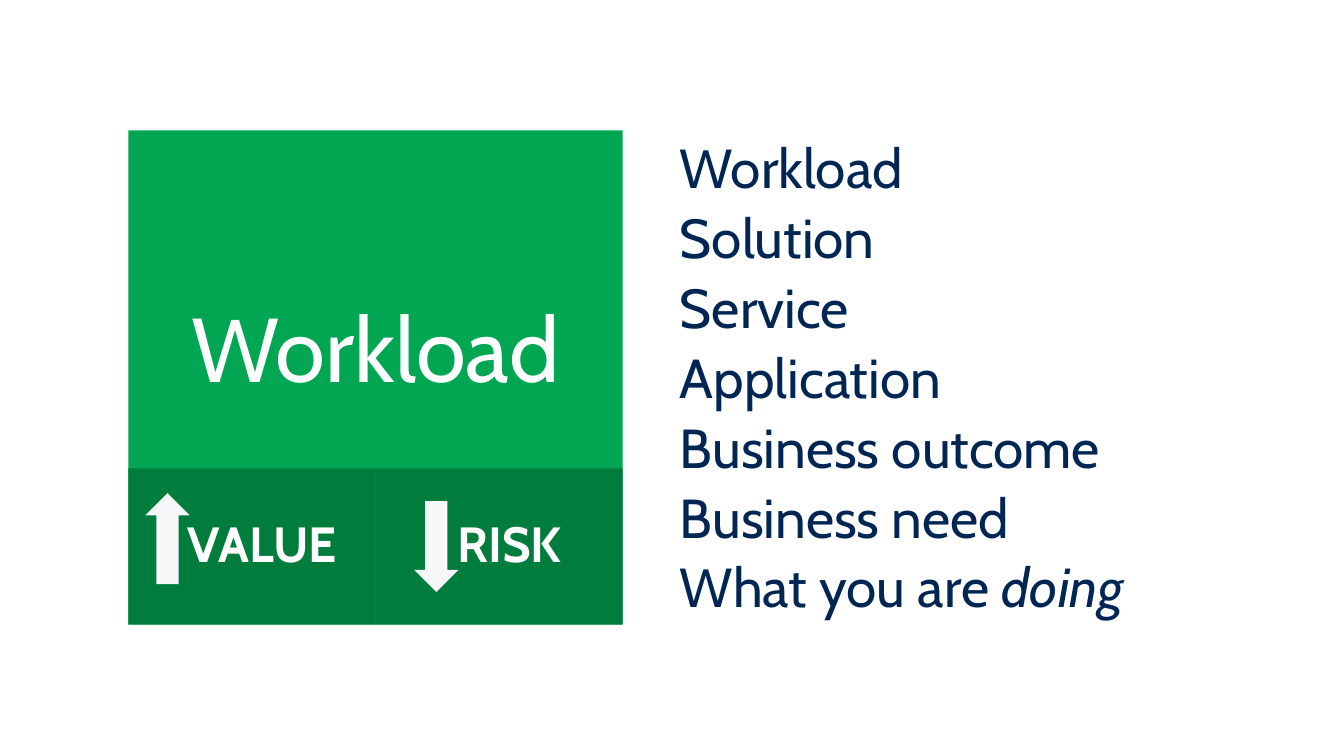
from pptx import Presentation
from pptx.dml.color import RGBColor
from pptx.enum.shapes import MSO_SHAPE
from pptx.enum.text import MSO_ANCHOR, PP_ALIGN
from pptx.util import Inches, Pt

GREEN = RGBColor(0x00, 0xA6, 0x51)
DARK_GREEN = RGBColor(0x00, 0x7D, 0x3D)
WHITE = RGBColor(0xFF, 0xFF, 0xFF)
PALE = RGBColor(0xF7, 0xF7, 0xF9)
NAVY = RGBColor(0x01, 0x26, 0x54)
FONT = "Cabin"
SLIDE_WIDTH, SLIDE_HEIGHT = 13.6, 7.65

TILE_BOX = (1.3, 1.32, 5, 5)
LIST_BOX = (6.72, 1.33, 6.58, 5.25)
BAND_HEIGHT = 1.58
ARROW_SIZE = (0.45, 0.92)
MEASURES = [
    ("VALUE", 0.17, 0.25, 0),
    ("RISK", 0.39, 0.33, 180),
]
TERMS = [
    [("Workload", False)],
    [("Solution", False)],
    [("Service", False)],
    [("Application", False)],
    [("Business outcome", False)],
    [("Business need", False)],
    [("What you are ", False), ("doing", True)],
]


def add_filled_shape(shapes, kind, box, color):
    shape = shapes.add_shape(kind, *map(Inches, box))
    shape.shadow.inherit = False
    shape.fill.solid()
    shape.fill.fore_color.rgb = color
    shape.line.fill.background()
    return shape


def set_insets(frame, left, top, right, bottom):
    frame.word_wrap = True
    frame.margin_left, frame.margin_top = Inches(left), Inches(top)
    frame.margin_right, frame.margin_bottom = Inches(right), Inches(bottom)


def add_run(paragraph, text, size, color, bold=False, italic=False):
    run = paragraph.add_run()
    run.text = text
    run.font.name = FONT
    run.font.size = Pt(size)
    run.font.color.rgb = color
    run.font.bold = bold
    run.font.italic = italic


def add_label(shape, text, size, insets, bold=False):
    frame = shape.text_frame
    set_insets(frame, *insets)
    frame.vertical_anchor = MSO_ANCHOR.MIDDLE
    paragraph = frame.paragraphs[0]
    paragraph.alignment = PP_ALIGN.CENTER
    paragraph.line_spacing = 0.9
    add_run(paragraph, text, size, WHITE, bold)


def add_measure(slide, box, text, arrow_left, arrow_top, rotation):
    left, top, width, height = box
    shapes = slide.shapes.add_group_shape().shapes
    panel = add_filled_shape(shapes, MSO_SHAPE.RECTANGLE, box, DARK_GREEN)
    add_label(panel, text, 36, (0.41, 0.16, 0.2, 0.16), bold=True)
    arrow_box = (left + arrow_left, top + arrow_top, *ARROW_SIZE)
    arrow = add_filled_shape(shapes, MSO_SHAPE.UP_ARROW, arrow_box, PALE)
    arrow.rotation = rotation


def add_workload_tile(slide, box):
    left, top, width, height = box
    tile = add_filled_shape(slide.shapes, MSO_SHAPE.RECTANGLE, box, GREEN)
    add_label(tile, "Workload", 66, (0.2, 0, 0.2, 0.5))
    panel_width = width / len(MEASURES)
    for column, measure in enumerate(MEASURES):
        panel_box = (left + column * panel_width, top + height - BAND_HEIGHT,
                     panel_width, BAND_HEIGHT)
        add_measure(slide, panel_box, *measure)


def add_term_list(slide, box):
    frame = slide.shapes.add_textbox(*map(Inches, box)).text_frame
    set_insets(frame, 0.16, 0.1, 0.16, 0.1)
    for index, term in enumerate(TERMS):
        paragraph = frame.add_paragraph() if index else frame.paragraphs[0]
        paragraph.line_spacing = 0.9
        paragraph.space_before = Pt(7.7)
        for text, italic in term:
            add_run(paragraph, text, 40, NAVY, italic=italic)


def main():
    presentation = Presentation()
    presentation.slide_width = Inches(SLIDE_WIDTH)
    presentation.slide_height = Inches(SLIDE_HEIGHT)
    slide = presentation.slides.add_slide(presentation.slide_layouts[6])
    slide.background.fill.solid()
    slide.background.fill.fore_color.rgb = WHITE
    add_workload_tile(slide, TILE_BOX)
    add_term_list(slide, LIST_BOX)
    presentation.save("out.pptx")


if __name__ == "__main__":
    main()
